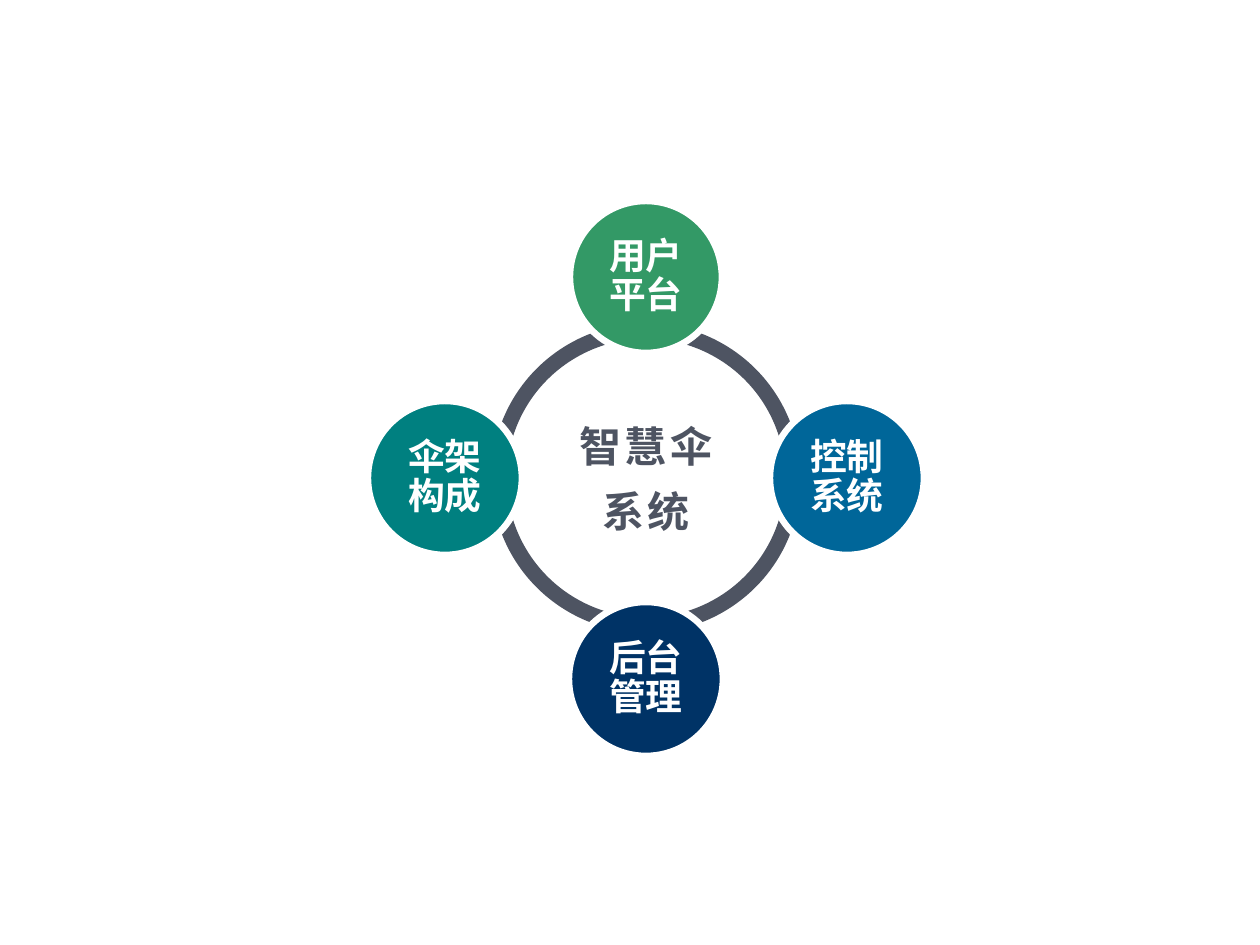
from lxml.etree import SubElement
from pptx import Presentation
from pptx.dml.color import RGBColor
from pptx.enum.shapes import MSO_SHAPE
from pptx.enum.text import MSO_ANCHOR, PP_ALIGN
from pptx.oxml.ns import qn
from pptx.util import Emu, Inches, Pt

PX = Inches(1) / 126
FONT = "Noto Sans CJK SC"
WHITE = RGBColor(0xFF, 0xFF, 0xFF)
SLATE = RGBColor(0x4E, 0x54, 0x62)
GREEN = RGBColor(0x33, 0x99, 0x66)
BLUE = RGBColor(0x00, 0x66, 0x99)
NAVY = RGBColor(0x00, 0x33, 0x66)
TEAL = RGBColor(0x00, 0x80, 0x80)

MID_X, MID_Y = 646, 478
REACH = 201


def add_disc(x, y, size, fill, line, weight, inset):
    """Add a circle centred on x, y and return its text frame."""
    left, top, side = (Emu(round(n * PX)) for n in (x - size / 2, y - size / 2, size))
    disc = slide.shapes.add_shape(MSO_SHAPE.OVAL, left, top, side, side)
    disc.shadow.inherit = False
    if fill is None:
        disc.fill.background()
    else:
        disc.fill.solid()
        disc.fill.fore_color.rgb = fill
    disc.line.color.rgb = line
    disc.line.width = Pt(weight)
    frame = disc.text_frame
    frame.word_wrap = True
    frame.vertical_anchor = MSO_ANCHOR.MIDDLE
    gap = Emu(round(inset * PX))
    frame.margin_left = frame.margin_right = gap
    frame.margin_top = frame.margin_bottom = gap
    return frame


def add_text(para, text, size, color):
    para.alignment = PP_ALIGN.CENTER
    run = para.add_run()
    run.text = text
    run.font.size = Pt(size)
    run.font.bold = True
    run.font.name = FONT
    run.font.color.rgb = color
    props = run._r.get_or_add_rPr()
    SubElement(props, qn("a:ea")).set("typeface", FONT)
    return props


prs = Presentation()
prs.slide_width, prs.slide_height = Inches(10), Inches(7.5)
slide = prs.slides.add_slide(prs.slide_layouts[6])

# Central ring
hub = add_disc(MID_X, MID_Y, 294, None, SLATE, 8.75, 2)
for para, text in zip((hub.paragraphs[0], hub.add_paragraph()), ("智慧伞", "系统")):
    para.space_after = Pt(8.4)
    add_text(para, text, 24, SLATE).set("spc", "220")

# Four parts around the ring: direction, size, colour
nodes = [
    ("用户平台", 0, -1, 152, GREEN),
    ("控制系统", 1, 0, 154, BLUE),
    ("后台管理", 0, 1, 154, NAVY),
    ("伞架构成", -1, 0, 154, TEAL),
]
for text, dx, dy, size, color in nodes:
    node = add_disc(MID_X + dx * REACH, MID_Y + dy * REACH, size, color, WHITE, 3.75, 1)
    para = node.paragraphs[0]
    para.line_spacing = 0.9
    add_text(para, text, 21, WHITE)

prs.save("out.pptx")
